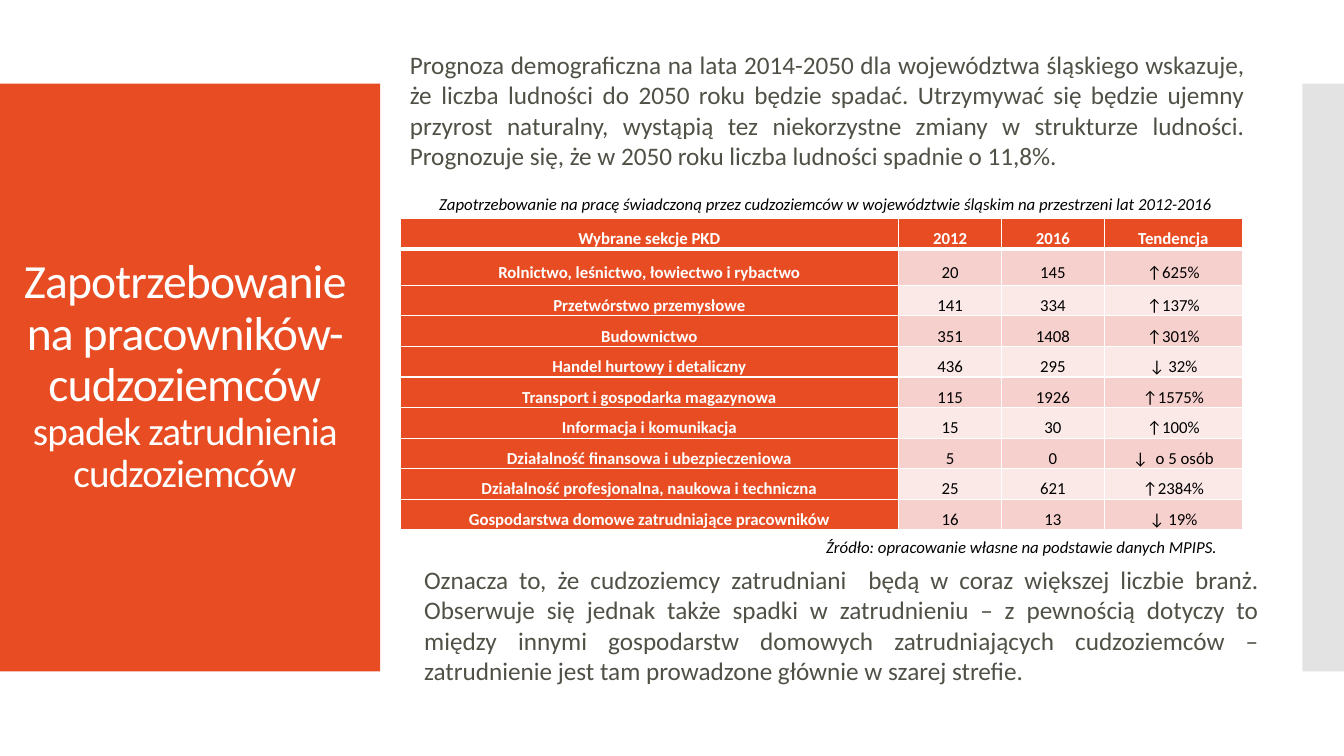
from lxml.etree import SubElement as Sub
from pptx import Presentation
from pptx.dml.color import RGBColor as RGB
from pptx.enum.shapes import MSO_SHAPE as Shape
from pptx.enum.text import MSO_ANCHOR as Anchor, PP_ALIGN as Align
from pptx.oxml.ns import qn
from pptx.util import Cm, Pt

ORANGE = RGB(0xE8, 0x4C, 0x22)
GREY = RGB(0xC8, 0xC8, 0xC8)
BANDS = RGB(0xF6, 0xD0, 0xCD), RGB(0xFB, 0xE9, 0xE8)
WHITE = RGB(0xFF, 0xFF, 0xFF)
BLACK = RGB(0, 0, 0)
OLIVE = RGB(0x50, 0x50, 0x46)
FONT = "Calibri"

COLS = 12.57, 2.59, 2.59, 3.48
HEAD = "Wybrane sekcje PKD", "2012", "2016", "Tendencja"
ROWS = [
    ("Rolnictwo, leśnictwo, łowiectwo i rybactwo", "20", "145", "↑625%"),
    ("Przetwórstwo przemysłowe", "141", "334", "↑137%"),
    ("Budownictwo", "351", "1408", "↑301%"),
    ("Handel hurtowy i detaliczny", "436", "295", "↓ 32%"),
    ("Transport i gospodarka magazynowa", "115", "1926", "↑1575%"),
    ("Informacja i komunikacja", "15", "30", "↑100%"),
    ("Działalność finansowa i ubezpieczeniowa", "5", "0", "↓  o 5 osób"),
    ("Działalność profesjonalna, naukowa i techniczna", "25", "621", "↑2384%"),
    ("Gospodarstwa domowe zatrudniające pracowników", "16", "13", "↓ 19%"),
]
FORECAST = (
    "Prognoza demograficzna na lata 2014-2050 dla województwa śląskiego "
    "wskazuje, że liczba ludności do 2050 roku będzie spadać. Utrzymywać się "
    "będzie ujemny przyrost naturalny, wystąpią tez niekorzystne zmiany w "
    "strukturze ludności. Prognozuje się, że w 2050 roku liczba ludności "
    "spadnie o 11,8%."
)
CAPTION = (
    "Zapotrzebowanie na pracę świadczoną przez cudzoziemców w województwie "
    "śląskim na przestrzeni lat 2012-2016"
)
SOURCE = "Źródło: opracowanie własne na podstawie danych MPIPS."
RESULT = (
    "Oznacza to, że cudzoziemcy zatrudniani  będą w coraz większej liczbie "
    "branż. Obserwuje się jednak także spadki w zatrudnieniu – z pewnością "
    "dotyczy to między innymi gospodarstw domowych zatrudniających "
    "cudzoziemców – zatrudnienie jest tam prowadzone głównie w szarej strefie."
)


def write(para, text, size=12, color=BLACK, bold=False, italic=False,
          align=None, track=None):
    """Add a run to the paragraph; track is letter spacing in points."""
    if align is not None:
        para.alignment = align
    run = para.add_run()
    run.text = text
    font = run.font
    font.name, font.size = FONT, Pt(size)
    font.bold, font.italic = bold, italic
    font.color.rgb = color
    if track is not None:
        run._r.get_or_add_rPr().set("spc", str(int(track * 100)))


def frame(slide, box):
    text = slide.shapes.add_textbox(*map(Cm, box)).text_frame
    text.word_wrap = True
    return text


def panel(slide, box, color, alpha=None):
    rect = slide.shapes.add_shape(Shape.RECTANGLE, *map(Cm, box))
    rect.shadow.inherit = False
    rect.line.fill.background()
    rect.fill.solid()
    rect.fill.fore_color.rgb = color
    if alpha is not None:
        tone = rect._element.spPr.find(qn("a:solidFill"))[0]
        Sub(tone, qn("a:alpha"), val=str(alpha * 1000))


def heading(slide, box):
    left, top, width, height = box
    panel(slide, box, ORANGE)
    text = frame(slide, (left, top + 1, width - 0.26, height - 2.03))
    text.vertical_anchor = Anchor.MIDDLE
    para = text.paragraphs[0]
    para.line_spacing = 0.9
    look = dict(color=WHITE, align=Align.CENTER, track=-0.6)
    write(para, "Zapotrzebowanie na pracowników-cudzoziemców", 34, **look)
    para.add_line_break()
    write(para, "spadek zatrudnienia cudzoziemców", 28, **look)


def border(cell, **widths):
    """Draw white edges of the given point widths, before the fill is set."""
    props = cell._tc.get_or_add_tcPr()
    for side in "LRTB":
        line = Sub(props, qn("a:ln" + side), w=str(Pt(widths.get(side, 1))))
        Sub(Sub(line, qn("a:solidFill")), qn("a:srgbClr"), val=str(WHITE))


def fill(cell, text, color, strong, **widths):
    border(cell, **widths)
    cell.fill.solid()
    cell.fill.fore_color.rgb = color
    cell.vertical_anchor = Anchor.MIDDLE
    cell.margin_left = cell.margin_right = Cm(0.18)
    cell.margin_top = cell.margin_bottom = 0
    para = cell.text_frame.paragraphs[0]
    para.line_spacing = 1.5
    para.space_before = para.space_after = Pt(6)
    write(para, text, color=WHITE if strong else BLACK, bold=strong,
          align=Align.CENTER)


def grid(slide, box):
    data = [HEAD, *ROWS]
    table = slide.shapes.add_table(len(data), len(COLS), *map(Cm, box)).table
    table.horz_banding = False
    for col, width in zip(table.columns, COLS):
        col.width = Cm(width)
    for r, row in enumerate(data):
        table.rows[r].height = Cm(0.91 if r == 1 else 0.77)
        edge = {0: {"B": 3}, 1: {"T": 3}}.get(r, {})
        for c, text in enumerate(row):
            strong = r == 0 or c == 0
            color = ORANGE if strong else BANDS[(r - 1) % 2]
            fill(table.cell(r, c), text, color, strong, **edge)


def content(slide, box):
    left, top, width, height = box
    body = dict(size=18, color=OLIVE, align=Align.JUSTIFY)
    note = dict(italic=True)
    grid(slide, (left, top + 4.39, sum(COLS), 7.84))
    for dx, dy, wide, high, text, look in (
        (0.74, 3.63, 20.83, 0.76, CAPTION, note),
        (0, 0, width, 3.33, FORECAST, body),
        (10.49, 12.29, 10.72, 0.76, SOURCE, note),
        (0.36, height - 3.33, width, 3.33, RESULT, body),
    ):
        part = frame(slide, (left + dx, top + dy, wide, high))
        write(part.paragraphs[0], text, **look)


def main():
    deck = Presentation()
    deck.slide_width, deck.slide_height = Cm(33.87), Cm(19.05)
    slide = deck.slides.add_slide(deck.slide_layouts[6])
    heading(slide, (0, 2.11, 9.58, 14.81))
    panel(slide, (32.82, 2.11, 1.05, 14.81), GREY, alpha=50)
    content(slide, (10.08, 1.12, 21.54, 16.31))
    deck.save("out.pptx")


if __name__ == "__main__":
    main()
